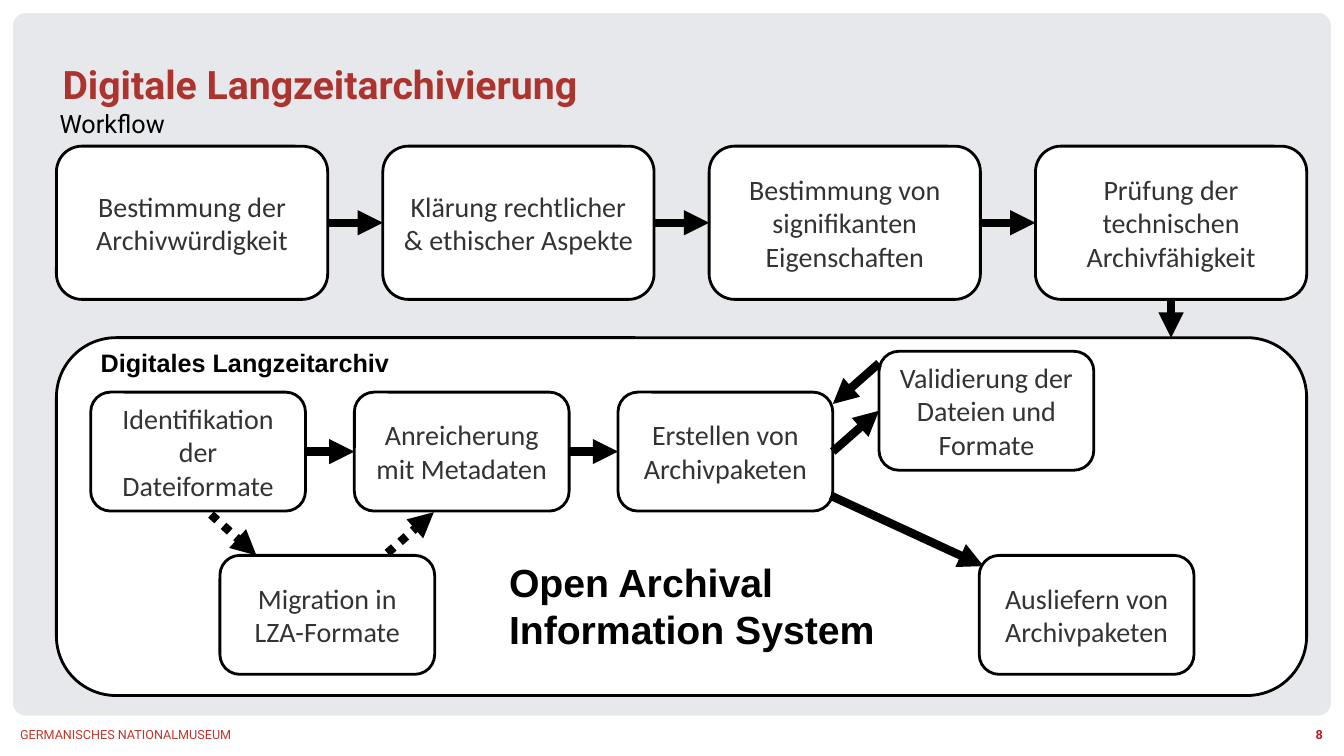
from collections import namedtuple

from lxml.etree import SubElement
from pptx import Presentation
from pptx.dml.color import RGBColor
from pptx.enum.dml import MSO_LINE
from pptx.enum.shapes import MSO_CONNECTOR, MSO_SHAPE
from pptx.enum.text import MSO_ANCHOR, MSO_AUTO_SIZE, PP_ALIGN
from pptx.oxml.ns import qn
from pptx.util import Inches, Pt

WHITE = RGBColor(0xFF, 0xFF, 0xFF)
BLACK = RGBColor(0x00, 0x00, 0x00)
GREY = RGBColor(0x33, 0x33, 0x33)
NAVY = RGBColor(0x0D, 0x23, 0x40)
RED = RGBColor(0xC0, 0x37, 0x2C)
PAGE_RED = RGBColor(0xC3, 0x19, 0x24)

TOP, LEFT, BOTTOM, RIGHT = range(4)
Box = namedtuple("Box", "left top width height")

PAGE = Box(0, 0, 13.33, 7.5)
HEADER = Box(0.62, 0.6, 12.14, 0.82)
WORKFLOW = Box(0.56, 1.45, 12.4, 1.52)
ARCHIVE = Box(0.56, 3.35, 12.4, 3.55)
FOOTER = Box(0.2, 7.09, 12.92, 0.4)

WORKFLOW_STEPS = [
    "Bestimmung der Archivwürdigkeit",
    "Klärung rechtlicher & ethischer Aspekte",
    "Bestimmung von signifikanten Eigenschaften",
    "Prüfung der technischen Archivfähigkeit",
]
ARCHIVE_STEPS = {
    "identify": ("Identifikation der Dateiformate", 0, 0),
    "enrich": ("Anreicherung mit Metadaten", 1, 0),
    "package": ("Erstellen von Archivpaketen", 2, 0),
    "validate": ("Validierung der Dateien und Formate", 2.99, -0.25),
    "migrate": ("Migration in LZA-Formate", 0.49, 1),
    "deliver": ("Ausliefern von Archivpaketen", 3.37, 1),
}
JOINED_ARROWS = [("identify", "enrich"), ("enrich", "package"), ("package", "validate")]
FREE_ARROWS = [
    ("identify", (0.56, 1.03), "migrate", (0.17, 0), True),
    ("migrate", (0.78, -0.02), "enrich", (0.37, 1.01), True),
    ("validate", (0, 0.1), "package", (1, 0.1), False),
    ("package", (0.99, 0.87), "deliver", (0.02, 0.09), False),
]


def to_emu(box):
    return [Inches(length) for length in box]


def write_text(shape, text, font="Calibri", size=20, color=GREY, bold=False,
               align=PP_ALIGN.LEFT, anchor=MSO_ANCHOR.TOP, inset=0, wrap=True):
    frame = shape.text_frame
    frame.text = text
    frame.auto_size = MSO_AUTO_SIZE.NONE
    frame.word_wrap = wrap
    frame.vertical_anchor = anchor
    frame.margin_left = frame.margin_right = Inches(inset)
    frame.margin_top = frame.margin_bottom = Inches(inset / 2)
    paragraph = frame.paragraphs[0]
    paragraph.alignment = align
    paragraph.font.name = font
    paragraph.font.size = Pt(size)
    paragraph.font.bold = bold
    paragraph.font.color.rgb = color


def add_label(slide, box, text, **text_format):
    write_text(slide.shapes.add_textbox(*to_emu(box)), text, **text_format)


def add_panel(slide, box, fill=WHITE):
    panel = slide.shapes.add_shape(MSO_SHAPE.ROUNDED_RECTANGLE, *to_emu(box))
    panel.shadow.inherit = False
    panel.fill.solid()
    panel.fill.fore_color.rgb = fill
    panel.line.color.rgb = BLACK
    panel.line.width = Pt(2)
    return panel


def add_step(slide, box, text):
    step = add_panel(slide, box)
    write_text(step, text, align=PP_ALIGN.CENTER, anchor=MSO_ANCHOR.MIDDLE, inset=0.1)
    return step


def point_on(shape, share):
    return (int(shape.left + shape.width * share[0]),
            int(shape.top + shape.height * share[1]))


def add_arrow(slide, start, end, dotted=False):
    arrow = slide.shapes.add_connector(MSO_CONNECTOR.STRAIGHT, *start, *end)
    arrow.line.color.rgb = BLACK
    arrow.line.width = Pt(6)
    if dotted:
        arrow.line.dash_style = MSO_LINE.ROUND_DOT
    properties = arrow._element.spPr
    SubElement(properties.find(qn("a:ln")), qn("a:tailEnd"), type="triangle")
    SubElement(properties, qn("a:effectLst"))
    return arrow


def join_steps(slide, source, target):
    arrow = add_arrow(slide, point_on(source, (1, 0.5)), point_on(target, (0, 0.5)))
    arrow.begin_connect(source, RIGHT)
    arrow.end_connect(target, LEFT)


def add_background(slide, box):
    margin = 0.13
    panel = add_panel(slide, Box(box.left + margin, box.top + margin,
                                 box.width - 2 * margin, box.height - 0.53), NAVY)
    panel.adjustments[0] = 0.018
    panel.line.fill.background()
    color = panel._element.spPr.find(qn("a:solidFill"))[0]
    SubElement(color, qn("a:alpha"), val="10000")


def add_header(slide, box):
    title = slide.shapes.title
    title.left, title.top, title.width, title.height = to_emu(box._replace(height=0.52))
    write_text(title, "Digitale Langzeitarchivierung", font="Roboto", size=28,
               color=RED, bold=True)
    add_label(slide, Box(box.left - 0.03, box.top + 0.47, 7.98, 0.35), "Workflow",
              font="Roboto", size=18, color=BLACK)


def add_workflow(slide, box):
    step_width = 2.69
    pitch = (box.width - step_width) / (len(WORKFLOW_STEPS) - 1)
    steps = [add_step(slide, box._replace(left=box.left + column * pitch, width=step_width), text)
             for column, text in enumerate(WORKFLOW_STEPS)]
    for source, target in zip(steps, steps[1:]):
        join_steps(slide, source, target)
    return steps[-1]


def add_archive(slide, box, last_step):
    panel = add_panel(slide, box)
    bottom = point_on(last_step, (0.5, 1))
    entry = add_arrow(slide, bottom, (bottom[0], panel.top))
    entry.begin_connect(last_step, BOTTOM)
    add_label(slide, Box(box.left + 0.34, box.top + 0.05, 3.09, 0.4),
              "Digitales Langzeitarchiv", font="Arial", size=18, color=BLACK,
              bold=True, inset=0.1, wrap=False)
    column_pitch, row_pitch = 2.615, 1.62
    steps = {
        name: add_step(slide, Box(box.left + 0.34 + column * column_pitch,
                                  box.top + 0.54 + row * row_pitch, 2.13, 1.18), text)
        for name, (text, column, row) in ARCHIVE_STEPS.items()
    }
    for source, target in JOINED_ARROWS:
        join_steps(slide, steps[source], steps[target])
    for source, start, target, end, dotted in FREE_ARROWS:
        add_arrow(slide, point_on(steps[source], start), point_on(steps[target], end), dotted)
    add_label(slide, Box(box.left + 4.39, box.top + 2.14, 4.22, 1.04),
              "Open Archival Information System", font="Arial", size=28,
              color=BLACK, bold=True, inset=0.1)


def add_footer(slide, box):
    half = box.width / 2
    add_label(slide, box._replace(width=half), "GERMANISCHES NATIONALMUSEUM",
              font="Roboto", size=9, color=RED, anchor=MSO_ANCHOR.MIDDLE)
    add_label(slide, box._replace(left=box.left + half, width=half), "8",
              font="Roboto", size=9, color=PAGE_RED, bold=True,
              align=PP_ALIGN.RIGHT, anchor=MSO_ANCHOR.MIDDLE)


def main():
    presentation = Presentation()
    presentation.slide_width = Inches(PAGE.width)
    presentation.slide_height = Inches(PAGE.height)
    slide = presentation.slides.add_slide(presentation.slide_layouts[5])
    add_background(slide, PAGE)
    add_header(slide, HEADER)
    last_step = add_workflow(slide, WORKFLOW)
    add_archive(slide, ARCHIVE, last_step)
    add_footer(slide, FOOTER)
    presentation.save("out.pptx")


if __name__ == "__main__":
    main()
